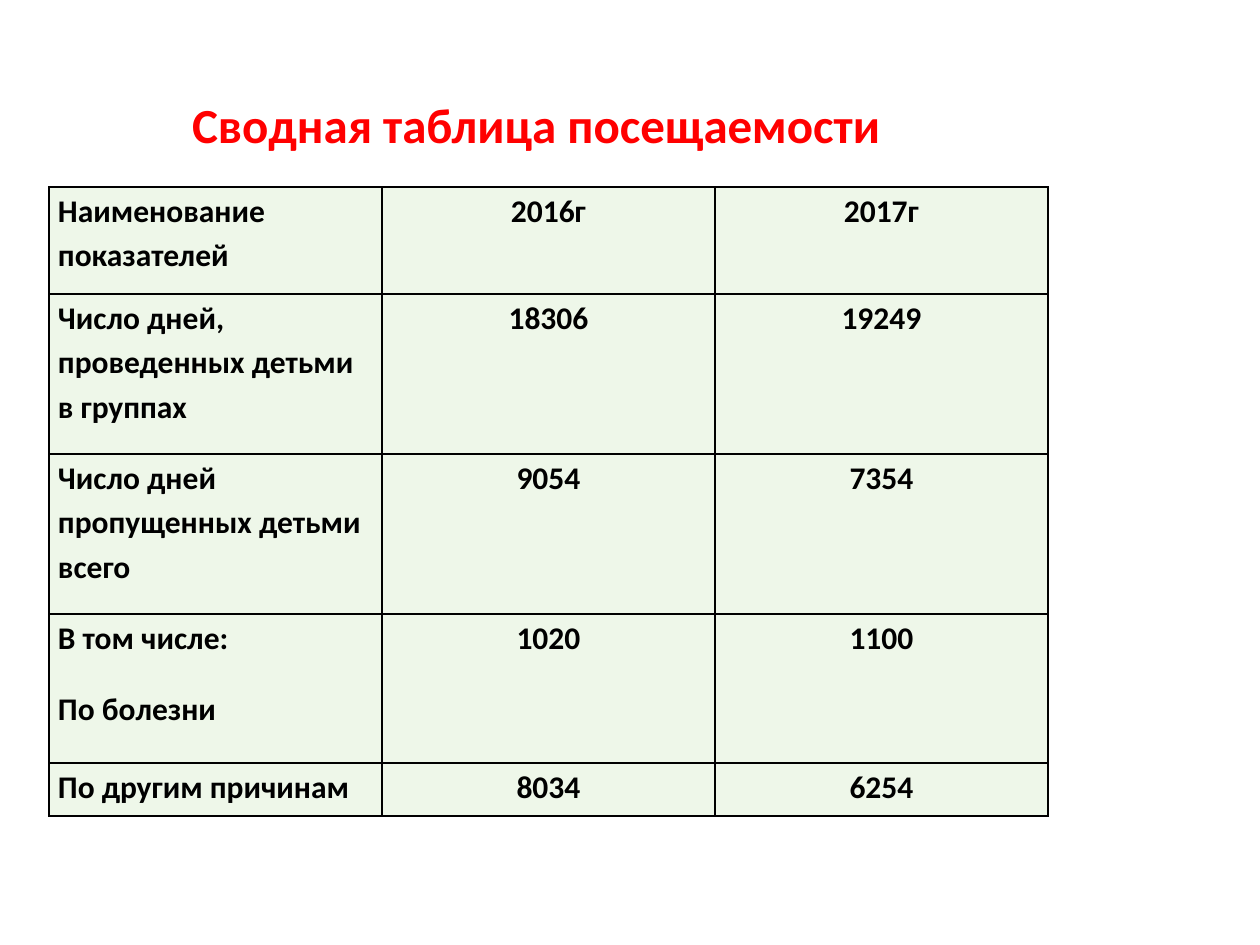
from lxml import etree
from pptx import Presentation
from pptx import util as u
from pptx.dml.color import RGBColor
from pptx.enum import text
from pptx.oxml import ns

PX = 914400 / 126
RED = RGBColor(0xFF, 0x00, 0x00)
BLACK = RGBColor(0x00, 0x00, 0x00)
PALE_GREEN = RGBColor(0xEE, 0xF7, 0xE9)
FONT = "Calibri"
ROW_HEIGHTS = [107, 160, 160, 149, 53]
ATTENDANCE = [
    ("Наименование показателей", "2016г", "2017г"),
    ("Число дней, проведенных детьми в группах", "18306", "19249"),
    ("Число дней пропущенных детьми всего", "9054", "7354"),
    ("В том числе:\nПо болезни", "1020", "1100"),
    ("По другим причинам", "8034", "6254"),
]


def px(length):
    """Turn pixels into EMU."""
    return u.Emu(round(length * PX))


def add_run(paragraph, wording, size, color):
    """Add one bold run to a paragraph."""
    run = paragraph.add_run()
    run.text = wording
    run.font.name = FONT
    run.font.size = u.Pt(size)
    run.font.bold = True
    run.font.color.rgb = color


def add_heading(slide, left, top, width, height):
    """Fill the title placeholder within the given box."""
    heading = slide.shapes.title
    heading.left, heading.top = px(left), px(top)
    heading.width, heading.height = px(width), px(height)
    frame = heading.text_frame
    frame.word_wrap = True
    frame.auto_size = text.MSO_AUTO_SIZE.NONE
    frame.vertical_anchor = text.MSO_ANCHOR.TOP
    paragraph = frame.paragraphs[0]
    paragraph.alignment = text.PP_ALIGN.CENTER
    add_run(paragraph, "Сводная таблица посещаемости", 28, RED)


def add_borders(cell):
    """Draw a thin black line on every side of a cell."""
    properties = cell._tc.get_or_add_tcPr()
    for side in ("a:lnL", "a:lnR", "a:lnT", "a:lnB"):
        line = etree.SubElement(properties, ns.qn(side), w=str(u.Pt(1)))
        fill = etree.SubElement(line, ns.qn("a:solidFill"))
        etree.SubElement(fill, ns.qn("a:srgbClr"), val=str(BLACK))


def fill_cell(cell, wording, alignment):
    """Format one cell and write its lines as paragraphs."""
    add_borders(cell)
    cell.fill.solid()
    cell.fill.fore_color.rgb = PALE_GREEN
    cell.margin_left = cell.margin_right = px(9)
    cell.margin_top = cell.margin_bottom = 0
    frame = cell.text_frame
    for index, line in enumerate(wording.split("\n")):
        paragraph = frame.add_paragraph() if index else frame.paragraphs[0]
        paragraph.alignment = alignment
        paragraph.line_spacing = 1.15
        paragraph.space_before = u.Pt(12 if index else 0)
        paragraph.space_after = u.Pt(3)
        add_run(paragraph, line, 18, BLACK)


def add_attendance(slide, left, top, width):
    """Build the attendance table with equal columns."""
    columns = len(ATTENDANCE[0])
    table = slide.shapes.add_table(
        len(ATTENDANCE), columns, px(left), px(top), px(width), px(sum(ROW_HEIGHTS))
    ).table
    table.first_row = table.horz_banding = False
    for column in table.columns:
        column.width = px(width / columns)
    for row, height, wordings in zip(table.rows, ROW_HEIGHTS, ATTENDANCE):
        row.height = px(height)
        for index, (cell, wording) in enumerate(zip(row.cells, wordings)):
            alignment = text.PP_ALIGN.CENTER if index else text.PP_ALIGN.LEFT
            fill_cell(cell, wording, alignment)


def main():
    """Build and save the slide."""
    presentation = Presentation()
    presentation.slide_width, presentation.slide_height = px(1260), px(945)
    slide = presentation.slides.add_slide(presentation.slide_layouts[5])
    add_heading(slide, 88, 88, 896, 72)
    add_attendance(slide, 49, 187, 999)
    presentation.save("out.pptx")


if __name__ == "__main__":
    main()
